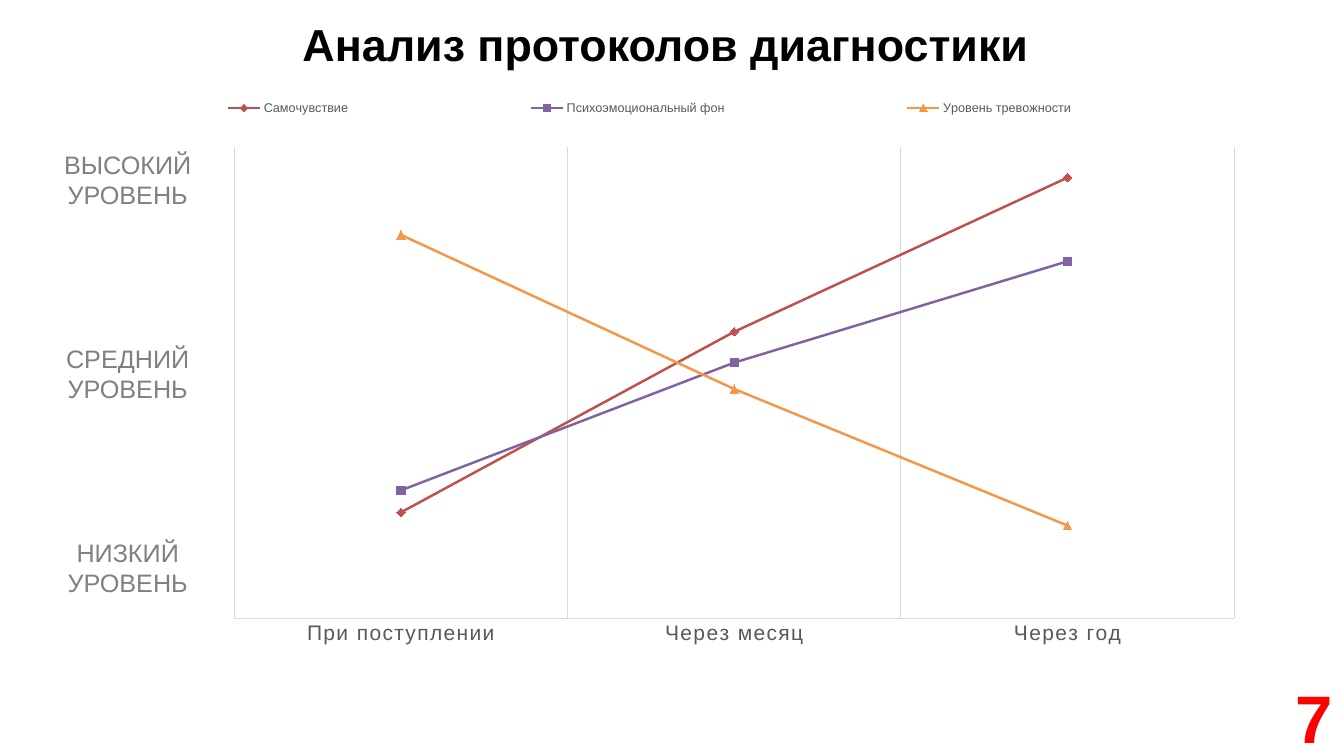
"""Build the slide with the line chart of diagnostic results."""
from lxml.etree import SubElement
from pptx import Presentation
from pptx.chart.data import CategoryChartData
from pptx.dml.color import RGBColor
from pptx.enum.chart import XL_CHART_TYPE, XL_LEGEND_POSITION, XL_MARKER_STYLE, XL_TICK_MARK
from pptx.enum.text import MSO_ANCHOR, PP_ALIGN
from pptx.oxml.ns import qn
from pptx.util import Pt

FONT = "Arial"
COLORS = {"title": "000000", "number": "FF0000", "level": "808080", "label": "595959",
          "grid": "D9D9D9", "red": "C0504D", "purple": "8064A2", "orange": "F79646"}
TITLE = "Анализ протоколов диагностики"
PAGE_NUMBER = "7"
LEVELS = ["ВЫСОКИЙ УРОВЕНЬ", "СРЕДНИЙ УРОВЕНЬ", "НИЗКИЙ УРОВЕНЬ"]
PERIODS = ["При поступлении", "Через месяц", "Через год"]
SERIES = [
    ("Самочувствие", (24, 65, 100), "red", XL_MARKER_STYLE.DIAMOND),
    ("Психоэмоциональный фон", (29, 58, 81), "purple", XL_MARKER_STYLE.SQUARE),
    ("Уровень тревожности", (87, 52, 21), "orange", XL_MARKER_STYLE.TRIANGLE),
]
PLOT_LAYOUT = {"layoutTarget": "inner", "xMode": "edge", "yMode": "edge",
               "x": 0.154, "y": 0.107, "w": 0.833, "h": 0.812}
LEGEND_LAYOUT = {"xMode": "edge", "yMode": "edge", "x": 0, "y": 0.01, "w": 1, "h": 0.06}
LEVEL_TOP, LEVEL_STEP = 103, 138.5


def color(name):
    return RGBColor.from_string(COLORS[name])


def style_font(font, size, name, bold=False):
    font.name, font.size, font.bold = FONT, Pt(size), bold
    font.color.rgb = color(name)


def style_line(line, name, width):
    line.color.rgb = color(name)
    line.width = Pt(width)


def write(box, text, size=18, name="level", bold=False, anchor=MSO_ANCHOR.TOP):
    frame = box.text_frame
    frame.word_wrap = True
    frame.vertical_anchor = anchor
    para = frame.paragraphs[0]
    para.alignment = PP_ALIGN.CENTER
    span = para.add_run()
    span.text = text
    style_font(span.font, size, name, bold)


def set_layout(parent, index, values):
    for old in parent.findall(qn("c:layout")):
        parent.remove(old)
    layout = SubElement(parent, qn("c:layout"))
    parent.insert(index, layout)
    manual = SubElement(layout, qn("c:manualLayout"))
    for tag, value in values.items():
        SubElement(manual, qn(f"c:{tag}")).set("val", str(value))


def add_levels_chart(page):
    data = CategoryChartData()
    data.categories = PERIODS
    for name, values, *_ in SERIES:
        data.add_series(name, values)
    chart = page.shapes.add_chart(XL_CHART_TYPE.LINE_MARKERS, Pt(35.3), Pt(60.5),
                                  Pt(857.5), Pt(414.7), data).chart
    chart.has_title = False
    style_font(chart.font, 10, "title")
    chart.plots[0].vary_by_categories = False

    for series, (_, _, name, marker) in zip(chart.plots[0].series, SERIES):
        series.smooth = False
        style_line(series.format.line, name, 1.75)
        series.marker.style, series.marker.size = marker, 6
        series.marker.format.fill.solid()
        series.marker.format.fill.fore_color.rgb = color(name)
        series.marker.format.line.color.rgb = color(name)

    periods = chart.category_axis
    periods.major_tick_mark = periods.minor_tick_mark = XL_TICK_MARK.NONE
    periods.has_major_gridlines = True
    style_line(periods.format.line, "grid", 0.75)
    style_line(periods.major_gridlines.format.line, "grid", 0.75)
    style_font(periods.tick_labels.font, 15, "label")
    for properties in chart.element.xpath(".//c:catAx/c:txPr//a:defRPr"):
        properties.set("spc", "100")

    scale = chart.value_axis
    scale.minimum_scale, scale.maximum_scale = 0, 107
    scale.has_major_gridlines = False
    scale.visible = False

    chart.has_legend = True
    chart.legend.position = XL_LEGEND_POSITION.TOP
    chart.legend.include_in_layout = False
    style_font(chart.legend.font, 9, "label")
    set_layout(chart.element.find(".//" + qn("c:plotArea")), 0, PLOT_LAYOUT)
    set_layout(chart.element.find(".//" + qn("c:legend")), 1, LEGEND_LAYOUT)


def main():
    deck = Presentation()
    deck.slide_width, deck.slide_height = Pt(960), Pt(540)
    page = deck.slides.add_slide(deck.slide_layouts[5])
    title = page.shapes.title
    title.left, title.top, title.width, title.height = Pt(134), Pt(8), Pt(683), Pt(46)
    write(title, TITLE, size=32, name="title", bold=True, anchor=MSO_ANCHOR.MIDDLE)
    number = page.shapes.add_textbox(Pt(911), Pt(479.5), Pt(56), Pt(65.5))
    write(number, PAGE_NUMBER, size=48, name="number", bold=True)
    add_levels_chart(page)
    for index, level in enumerate(LEVELS):
        top = LEVEL_TOP + index * LEVEL_STEP
        write(page.shapes.add_textbox(Pt(25), Pt(top), Pt(132.5), Pt(51)), level)
    deck.save("out.pptx")


if __name__ == "__main__":
    main()
